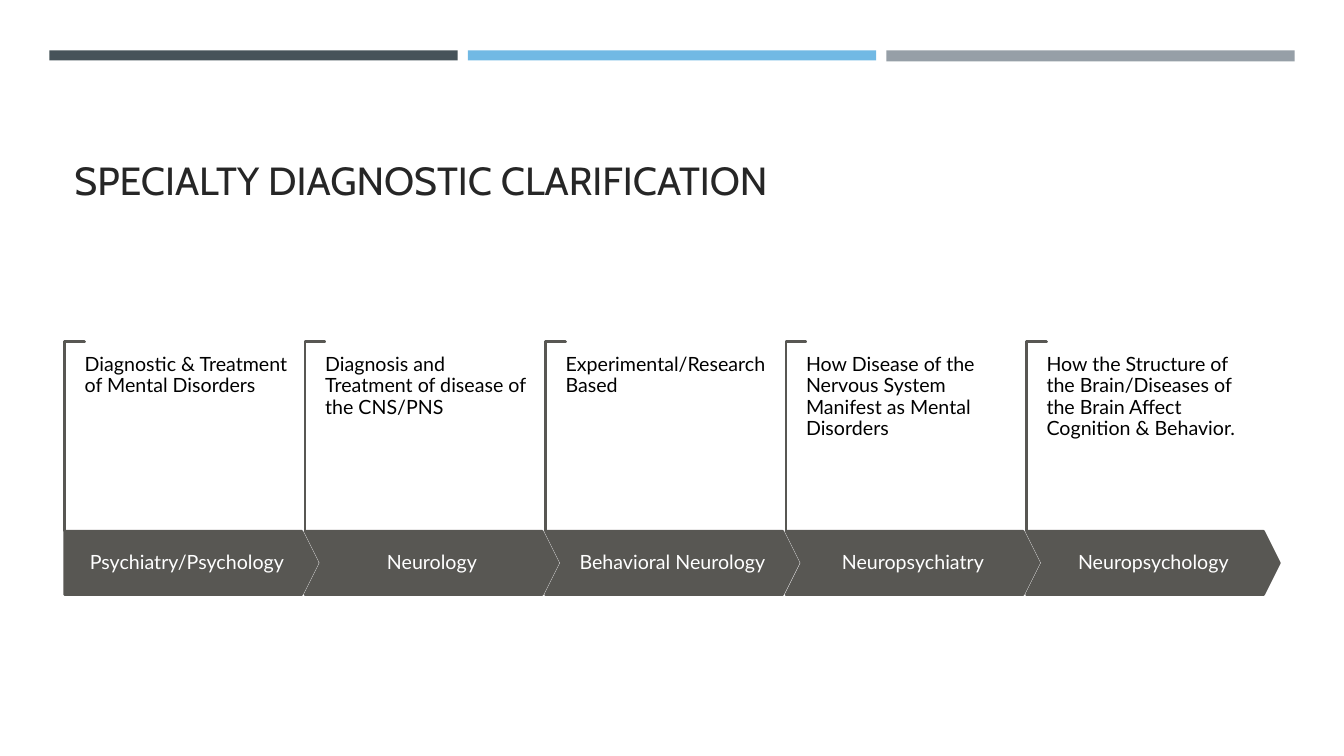
from dataclasses import dataclass

from pptx import Presentation
from pptx.dml.color import RGBColor
from pptx.enum.shapes import MSO_SHAPE
from pptx.enum.text import MSO_ANCHOR, PP_ALIGN
from pptx.util import Inches, Pt

WHITE = RGBColor(0xFF, 0xFF, 0xFF)
BLACK = RGBColor(0x00, 0x00, 0x00)
INK = RGBColor(0x26, 0x26, 0x26)
SLATE = RGBColor(0x46, 0x53, 0x59)
SKY = RGBColor(0x71, 0xB9, 0xE4)
SILVER = RGBColor(0x96, 0x9F, 0xA7)
OLIVE = RGBColor(0x58, 0x57, 0x53)
SAND = RGBColor(0xEB, 0xDD, 0xC3)

FIRST_LEFT = 0.64
LAST_LEFT = 10.18
BAND_TOP = 5.27
BAND_HEIGHT = 0.63


@dataclass(frozen=True)
class Specialty:
    name: str
    focus: str


@dataclass(frozen=True)
class Bar:
    left: float
    height: float
    color: RGBColor


SPECIALTIES = [
    Specialty("Psychiatry/Psychology", "Diagnostic & Treatment of Mental Disorders"),
    Specialty("Neurology", "Diagnosis and Treatment of disease of the CNS/PNS"),
    Specialty("Behavioral Neurology", "Experimental/Research Based"),
    Specialty("Neuropsychiatry", "How Disease of the Nervous System Manifest as Mental Disorders"),
    Specialty(
        "Neuropsychology",
        "How the Structure of the Brain/Diseases of the Brain Affect Cognition & Behavior.",
    ),
]
BARS = [Bar(0.49, 0.1, SLATE), Bar(4.64, 0.1, SKY), Bar(8.79, 0.11, SILVER)]


def add_figure(s, kind, left, top, width, height, fill, line=None, adjustments=(), rotation=0):
    sp = s.shapes.add_shape(kind, Inches(left), Inches(top), Inches(width), Inches(height))
    sp.shadow.inherit = False
    sp.fill.solid()
    sp.fill.fore_color.rgb = fill
    if line is None:
        sp.line.fill.background()
    else:
        sp.line.color.rgb = line
        sp.line.width = Pt(1.75)
    for i, value in enumerate(adjustments):
        sp.adjustments[i] = value
    sp.rotation = rotation
    return sp


def add_text(s, text: str, left: float, top: float, width: float, height: float, *,
             font: str = "Lato", size: float = 14, color: RGBColor = BLACK,
             anchor=MSO_ANCHOR.TOP, align=PP_ALIGN.LEFT, spacing: float = 0.9,
             inset_x: float = 0, inset_y: float = 0) -> None:
    box = s.shapes.add_textbox(Inches(left), Inches(top), Inches(width), Inches(height))
    tf = box.text_frame
    tf.word_wrap = True
    tf.vertical_anchor = anchor
    tf.margin_left = tf.margin_right = Inches(inset_x)
    tf.margin_top = tf.margin_bottom = Inches(inset_y)
    p = tf.paragraphs[0]
    p.alignment = align
    p.line_spacing = spacing
    r = p.add_run()
    r.text = text
    r.font.name = font
    r.font.size = Pt(size)
    r.font.color.rgb = color


def add_specialty(s, specialty: Specialty, left: float, first: bool) -> None:
    add_figure(s, MSO_SHAPE.CORNER, left - 0.84, 4.23, 1.88, 0.2, SAND, OLIVE,
               (0.01, 0.01), 90)
    kind = MSO_SHAPE.PENTAGON if first else MSO_SHAPE.CHEVRON
    add_figure(s, kind, left, BAND_TOP, 2.51, BAND_HEIGHT, OLIVE, OLIVE, (0.25,))
    label_left, label_width = (left, 2.43) if first else (left + 0.16, 2.2)
    add_text(s, specialty.name, label_left, BAND_TOP, label_width, BAND_HEIGHT,
             color=WHITE, anchor=MSO_ANCHOR.MIDDLE, align=PP_ALIGN.CENTER,
             inset_x=0.1, inset_y=0.19)
    add_text(s, specialty.focus, left + 0.2, 3.52, 2.04, 1.18)


def main() -> None:
    prs = Presentation()
    prs.slide_width = Inches(13.33)
    prs.slide_height = Inches(7.5)
    s = prs.slides.add_slide(prs.slide_layouts[6])
    for bar in BARS:
        add_figure(s, MSO_SHAPE.RECTANGLE, bar.left, 0.5, 4.05, bar.height, bar.color)
    add_text(s, "SPECIALTY DIAGNOSTIC CLARIFICATION", FIRST_LEFT, 0.77, 12.06, 1.3,
             font="Cabin", size=28, color=INK, anchor=MSO_ANCHOR.BOTTOM,
             inset_x=0.1, inset_y=0.05)
    step = (LAST_LEFT - FIRST_LEFT) / (len(SPECIALTIES) - 1)
    for i, specialty in enumerate(SPECIALTIES):
        add_specialty(s, specialty, FIRST_LEFT + i * step, i == 0)
    prs.save("out.pptx")


if __name__ == "__main__":
    main()
